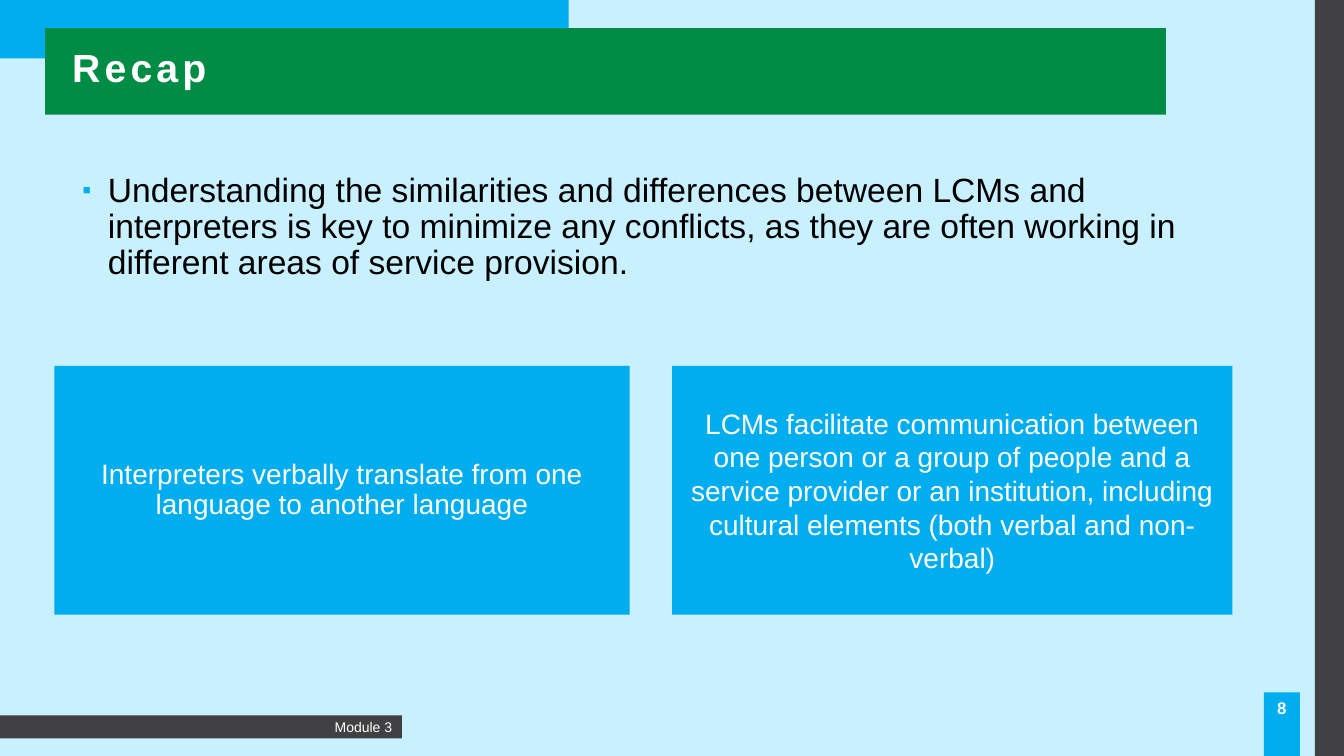
from lxml import etree
from pptx import Presentation, util as u
from pptx.dml.color import RGBColor
from pptx.enum import shapes, text
from pptx.oxml.ns import qn

WIDE, HIGH = 33.87, 19.05
BLUE, GREEN, GREY, WHITE = "00ADEF", "008C44", "414042", "FFFFFF"
ALIGN = text.PP_ALIGN
MID, TOP = text.MSO_ANCHOR.MIDDLE, text.MSO_ANCHOR.TOP


def paint(fill, tone):
    """Give a fill one solid colour."""
    fill.solid()
    fill.fore_color.rgb = RGBColor.from_string(tone)


def block(slide, box, tone):
    """Draw a flat rectangle in a box of centimetres."""
    shape = slide.shapes.add_shape(shapes.MSO_SHAPE.RECTANGLE, *map(u.Cm, box))
    shape.shadow.inherit = False
    paint(shape.fill, tone)
    shape.line.fill.background()
    return shape


def write(shape, words, size=20, tone=WHITE, bold=False, align=ALIGN.CENTER,
          anchor=MID, lead=None, before=0, track=0, side=0.25):
    """Set formatted text in a shape and return its paragraph."""
    frame = shape.text_frame
    frame.word_wrap = True
    frame.vertical_anchor = anchor
    frame.margin_left = frame.margin_right = u.Cm(side)
    para = frame.paragraphs[0]
    para.alignment = align
    para.line_spacing = lead
    para.space_before = u.Pt(before)
    run = para.add_run()
    run.text = words
    font = run.font
    font.name, font.size, font.bold = "Arial", u.Pt(size), bold
    paint(font.fill, tone)
    if track:
        run.font._element.set("spc", str(track * 100))
    return para


def bullet(para, mark, tone, scale, indent):
    """Hang a coloured bullet before a paragraph."""
    props = para._p.get_or_add_pPr()
    props.set("marL", str(u.Cm(indent)))
    props.set("indent", str(-u.Cm(indent)))
    hue = etree.SubElement(props, qn("a:buClr"))
    etree.SubElement(hue, qn("a:srgbClr"), val=tone)
    etree.SubElement(props, qn("a:buSzPct"), val=str(scale * 1000))
    etree.SubElement(props, qn("a:buFont"), typeface="Arial")
    etree.SubElement(props, qn("a:buChar"), char=mark)


def header(slide, box, title):
    """Place the title bar over a blue corner band."""
    left, top, wide, high = box
    block(slide, (0, 0, 14.33, 1.47), BLUE)
    block(slide, box, GREEN)
    label = slide.shapes.add_textbox(
        *map(u.Cm, (left + 0.43, top + 0.28, wide - 4.27, high - 0.63)))
    write(label, title, size=28, bold=True, align=ALIGN.LEFT,
          lead=0.9, before=10, track=3)


def point(slide, box, words):
    """Place the main bulleted statement."""
    area = slide.shapes.add_textbox(*map(u.Cm, box))
    para = write(area, words, size=24, tone="000000", align=ALIGN.LEFT,
                 anchor=TOP, lead=0.9, before=10)
    bullet(para, "▪", BLUE, 75, 0.64)


def cards(slide, box, left, right):
    """Place two statement cards across a box."""
    x, top, wide, high = box
    first, gap = 14.5, 1.07
    write(block(slide, (x, top, first, high), BLUE), left, lead=0.9)
    start = first + gap
    write(block(slide, (x + start, top, wide - start, high), BLUE), right)


def footer(slide, box, module, number):
    """Place the edge strip, module bar and page tab."""
    left, top, wide, high = box
    base = top + high
    block(slide, (left + wide - 0.73, top, 0.73, high), GREY)
    bar = block(slide, (left, base - 1.02, 10.13, 0.58), GREY)
    write(bar, module, size=10, align=ALIGN.RIGHT)
    tab = block(slide, (left + wide - 2.02, base - 1.6, 0.91, 1.6), BLUE)
    write(tab, number, size=12, bold=True, anchor=TOP, side=0.1)


def main():
    """Build the recap slide."""
    deck = Presentation()
    deck.slide_width, deck.slide_height = u.Cm(WIDE), u.Cm(HIGH)
    slide = deck.slides.add_slide(deck.slide_layouts[6])
    paint(slide.background.fill, "C8F0FF")
    header(slide, (1.14, 0.71, 28.24, 2.18), "Recap")
    footer(slide, (0, 0, WIDE, HIGH), "Module 3", "8")
    point(slide, (1.83, 4.24, 29.85, 4.06),
          "Understanding the similarities and differences between LCMs and "
          "interpreters is key to minimize any conflicts, as they are often "
          "working in different areas of service provision.")
    cards(slide, (1.37, 9.22, 29.69, 6.27),
          "Interpreters verbally translate from one language to "
          "another language",
          "LCMs facilitate communication between one person or a group of "
          "people and a service provider or an institution, including "
          "cultural elements (both verbal and non-verbal)")
    deck.save("out.pptx")


if __name__ == "__main__":
    main()
